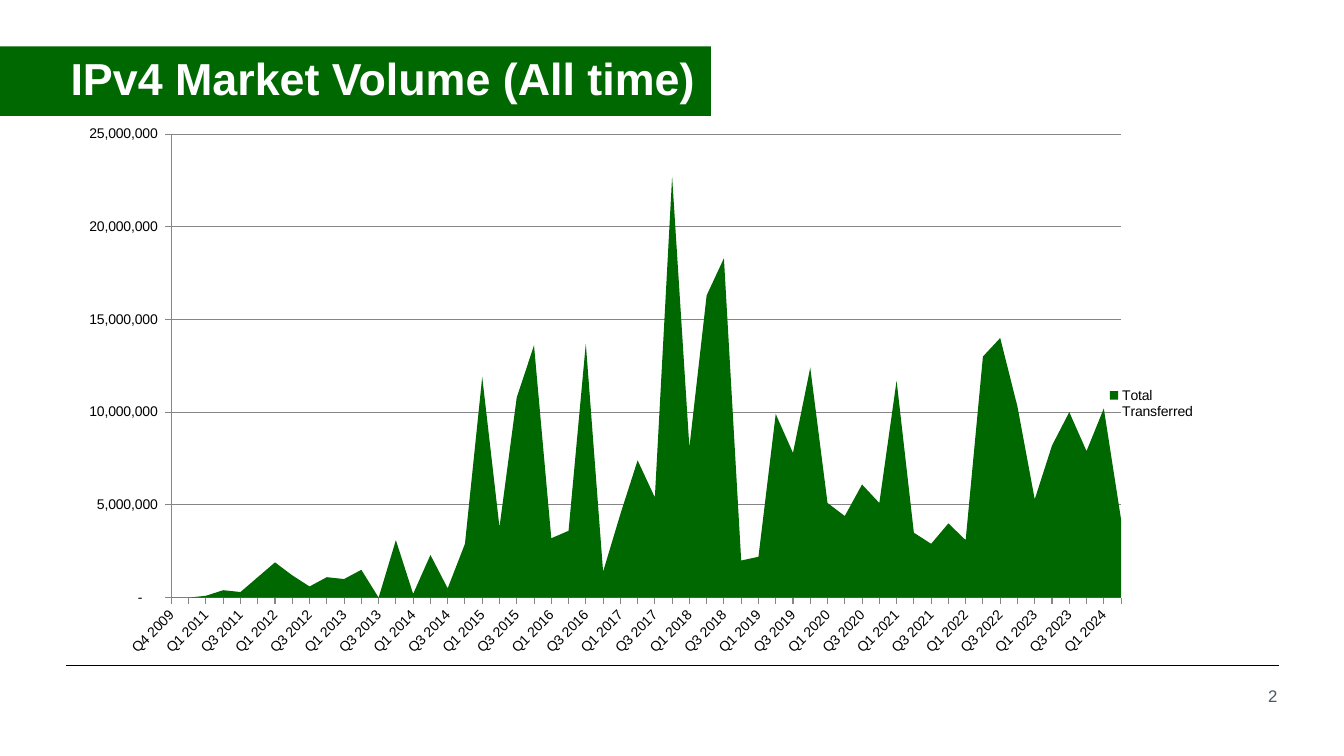
from typing import NamedTuple

from lxml.etree import SubElement
from pptx import Presentation
from pptx.chart.data import CategoryChartData
from pptx.dml.color import RGBColor
from pptx.enum.chart import XL_CHART_TYPE, XL_LEGEND_POSITION, XL_TICK_MARK
from pptx.enum.shapes import MSO_CONNECTOR, MSO_SHAPE
from pptx.enum.text import MSO_ANCHOR, PP_ALIGN
from pptx.oxml.ns import qn
from pptx.util import Inches, Pt

GREEN = RGBColor(0x00, 0x68, 0x00)
GRAY = RGBColor(0x86, 0x86, 0x86)
SLATE = RGBColor(0x49, 0x59, 0x65)
BLACK = RGBColor(0x00, 0x00, 0x00)
WHITE = RGBColor(0xFF, 0xFF, 0xFF)
FONT = "Arial"


class Frame(NamedTuple):
    """Position and size on the slide, in inches."""
    left: float
    top: float
    width: float
    height: float

    def lengths(self) -> list:
        return [Inches(v) for v in self]


TITLE = Frame(0, 0.46, 7.05, 0.69)
NUMBER = Frame(9.67, 6.7, 3, 0.4)
CHART = Frame(0.62, 1.15, 11.73, 5.48)
PLOT = Frame(1.7, 1.33, 9.42, 4.6)
LEGEND = Frame(10.87, 3.81, 1.1, 0.4)

QUARTERS = ["Q4 2009", "Q2 2010"]
QUARTERS += [f"Q{q} {year}" for year in range(2011, 2024) for q in range(1, 5)]
QUARTERS += ["Q1 2024", "Q2 2024"]

# Addresses transferred per quarter, in millions
MILLIONS = [
    0, 0,
    0.1, 0.4, 0.3, 1.1,
    1.9, 1.2, 0.6, 1.1,
    1.0, 1.5, 0, 3.1,
    0.2, 2.3, 0.5, 2.9,
    11.9, 3.8, 10.8, 13.6,
    3.2, 3.6, 13.7, 1.4,
    4.5, 7.4, 5.4, 22.7,
    8.1, 16.3, 18.3, 2.0,
    2.2, 9.9, 7.8, 12.4,
    5.1, 4.4, 6.1, 5.1,
    11.7, 3.5, 2.9, 4.0,
    3.1, 13.0, 14.0, 10.3,
    5.3, 8.2, 10.0, 7.9,
    10.2, 4.2,
]


def write_text(s, text: str, *, size: float, color: RGBColor, bold: bool = False,
               align=PP_ALIGN.LEFT, wrap: bool = True, spacing: float = 1.0,
               insets: tuple = (0, 0.05, 0, 0.05)) -> None:
    tf = s.text_frame
    tf.word_wrap = wrap
    tf.vertical_anchor = MSO_ANCHOR.MIDDLE
    tf.margin_left, tf.margin_top, tf.margin_right, tf.margin_bottom = map(Inches, insets)
    p = tf.paragraphs[0]
    p.alignment = align
    p.line_spacing = spacing
    r = p.add_run()
    r.text = text
    r.font.name = FONT
    r.font.size = Pt(size)
    r.font.bold = bold
    r.font.color.rgb = color


def place_in_chart(parent, index: int, frame: Frame, inner: bool = False) -> None:
    """Give a chart part a fixed place, as fractions of the chart."""
    for old in parent.findall(qn("c:layout")):
        parent.remove(old)
    layout = SubElement(parent, qn("c:layout"))
    parent.insert(index, layout)
    manual = SubElement(layout, qn("c:manualLayout"))
    settings = {"layoutTarget": "inner"} if inner else {}
    settings |= {
        "xMode": "edge",
        "yMode": "edge",
        "x": (frame.left - CHART.left) / CHART.width,
        "y": (frame.top - CHART.top) / CHART.height,
        "w": frame.width / CHART.width,
        "h": frame.height / CHART.height,
    }
    for tag, value in settings.items():
        SubElement(manual, qn(f"c:{tag}")).set("val", str(value))


def add_volume_chart(slide) -> None:
    data = CategoryChartData()
    data.categories = QUARTERS
    data.add_series("Total Transferred", [round(m * 1_000_000) for m in MILLIONS])
    chart = slide.shapes.add_chart(
        XL_CHART_TYPE.AREA_STACKED, *CHART.lengths(), data).chart
    chart.has_title = False
    chart.font.name = FONT
    chart.font.size = Pt(10)
    chart.font.color.rgb = BLACK
    plot = chart.plots[0]
    plot.vary_by_categories = False
    fill = plot.series[0].format.fill
    fill.solid()
    fill.fore_color.rgb = GREEN

    # Axes
    quarters, volume = chart.category_axis, chart.value_axis
    for axis in (quarters, volume):
        axis.major_tick_mark = XL_TICK_MARK.OUTSIDE
        axis.minor_tick_mark = XL_TICK_MARK.NONE
        axis.format.line.color.rgb = GRAY
        axis.format.line.width = Pt(0.75)
    quarters.has_major_gridlines = False
    volume.has_major_gridlines = True
    volume.major_gridlines.format.line.color.rgb = GRAY
    volume.major_gridlines.format.line.width = Pt(0.75)
    volume.minimum_scale, volume.maximum_scale = 0, 25_000_000
    volume.major_unit = 5_000_000
    labels = volume.tick_labels
    labels.number_format = '_(* #,##0_);_(* \\(#,##0\\);_(* "-"??_);_('
    labels.number_format_is_linked = False

    # Slanted labels on every second quarter, area from edge to edge
    quarters.tick_labels.font.size = Pt(10)
    cat_ax = chart.element.find(".//" + qn("c:catAx"))
    cat_ax.find(qn("c:txPr")).find(qn("a:bodyPr")).set("rot", "-2700000")
    last = cat_ax.find(qn("c:noMultiLvlLbl"))
    for tag, step in (("c:tickLblSkip", "2"), ("c:tickMarkSkip", "1")):
        skip = SubElement(cat_ax, qn(tag))
        skip.set("val", step)
        if last is not None:
            last.addprevious(skip)
    val_ax = chart.element.find(".//" + qn("c:valAx"))
    val_ax.find(qn("c:crossBetween")).set("val", "midCat")

    # Legend and plot area
    chart.has_legend = True
    chart.legend.position = XL_LEGEND_POSITION.RIGHT
    chart.legend.include_in_layout = False
    place_in_chart(chart.element.find(".//" + qn("c:legend")), 1, LEGEND)
    place_in_chart(chart.element.find(".//" + qn("c:plotArea")), 0, PLOT, inner=True)


def main() -> None:
    prs = Presentation()
    prs.slide_width, prs.slide_height = Inches(13.33), Inches(7.5)
    slide = prs.slides.add_slide(prs.slide_layouts[6])

    # Footer rule
    rule = slide.shapes.add_connector(
        MSO_CONNECTOR.STRAIGHT, Inches(0.65), Inches(6.6), Inches(12.69), Inches(6.6))
    rule.line.color.rgb = BLACK
    rule.line.width = Pt(1)
    SubElement(rule.element.spPr, qn("a:effectLst"))

    # Title banner
    banner = slide.shapes.add_shape(MSO_SHAPE.RECTANGLE, *TITLE.lengths())
    banner.shadow.inherit = False
    banner.fill.solid()
    banner.fill.fore_color.rgb = GREEN
    banner.line.fill.background()
    write_text(banner, "IPv4 Market Volume (All time)", size=32, color=WHITE, bold=True,
               wrap=False, spacing=0.9, insets=(0.7, 0.1, 0.1, 0.1))

    # Slide number
    number = slide.shapes.add_textbox(*NUMBER.lengths())
    write_text(number, "2", size=12, color=SLATE, align=PP_ALIGN.RIGHT)

    add_volume_chart(slide)
    prs.save("out.pptx")


if __name__ == "__main__":
    main()
